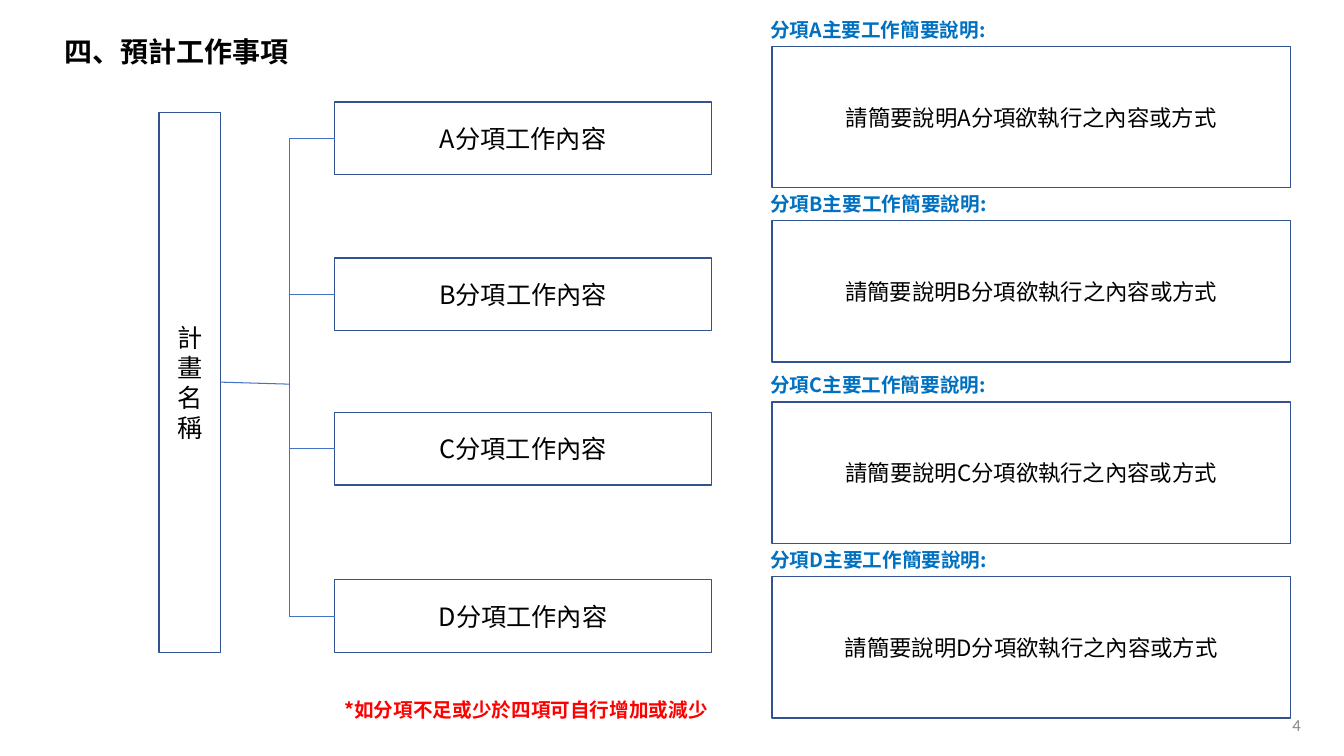
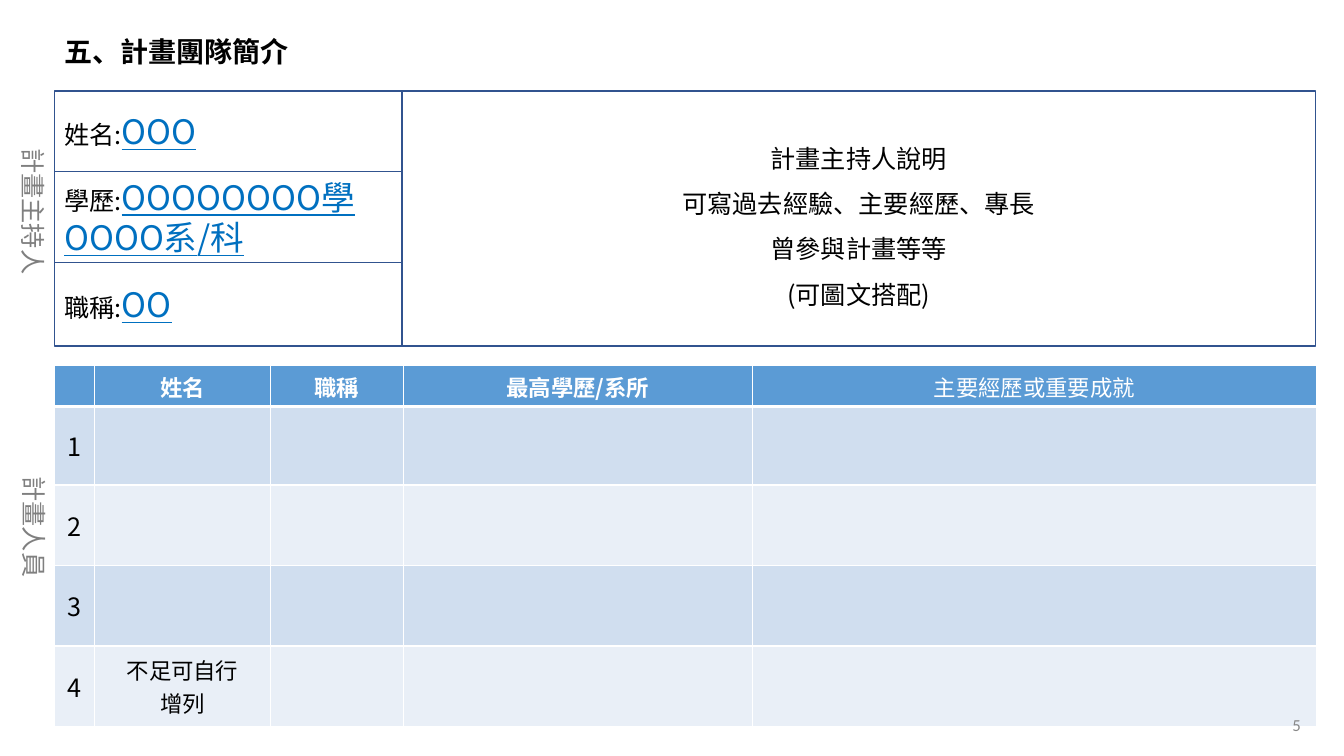
from lxml.etree import SubElement
from pptx import Presentation
from pptx.dml.color import RGBColor
from pptx.enum.shapes import MSO_CONNECTOR, MSO_SHAPE
from pptx.enum.text import MSO_ANCHOR, PP_ALIGN
from pptx.oxml.ns import qn
from pptx.util import Cm, Pt

COLORS = {
    "text": "000000", "accent": "0070C0", "warning": "FF0000", "muted": "7F7F7F",
    "number": "888888", "outline": "31538F", "connector": "4472C4",
    "header": "5B9BD5", "band_dark": "D0DEEF", "band_light": "E9EFF7", "white": "FFFFFF",
}
FONT = "Noto Sans CJK TC"
BLANK = {"size": 24, "color": "accent", "underline": True}
SECTIONS = "ABCD"


def rgb(name):
    """Return the named palette colour."""
    return RGBColor.from_string(COLORS[name])


def format_run(run, size=18, color="text", bold=False, underline=None, font=FONT):
    """Format one run, including its East Asian typeface."""
    run.font.size = Pt(size)
    run.font.bold = bold
    run.font.underline = underline
    run.font.color.rgb = rgb(color)
    run.font.name = font
    SubElement(run.font._element, qn("a:ea"), typeface=font)


def write(frame, *paragraphs, align=PP_ALIGN.LEFT, anchor=MSO_ANCHOR.TOP, spacing=None, **style):
    """Fill a text frame; a paragraph is a string or a list of (text, style) runs."""
    frame.word_wrap = True
    frame.vertical_anchor = anchor
    for index, content in enumerate(paragraphs):
        paragraph = frame.add_paragraph() if index else frame.paragraphs[0]
        paragraph.alignment = align
        if spacing:
            paragraph.line_spacing = spacing
        for text, changes in [(content, {})] if isinstance(content, str) else content:
            run = paragraph.add_run()
            run.text = text
            format_run(run, **{**style, **changes})


def add_label(slide, box, *paragraphs, rotation=0, **style):
    """Add free text in a box given in centimetres."""
    label = slide.shapes.add_textbox(*map(Cm, box))
    label.rotation = rotation
    write(label.text_frame, *paragraphs, **style)


def add_panel(slide, box, *paragraphs, align=PP_ALIGN.CENTER, **style):
    """Add an outlined rectangle with vertically centred text."""
    panel = slide.shapes.add_shape(MSO_SHAPE.RECTANGLE, *map(Cm, box))
    panel.shadow.inherit = False
    panel.fill.background()
    panel.line.color.rgb = rgb("outline")
    panel.line.width = Pt(1)
    write(panel.text_frame, *paragraphs, align=align, anchor=MSO_ANCHOR.MIDDLE, **style)


def add_line(slide, *ends):
    """Add a thin straight connector between two points."""
    line = slide.shapes.add_connector(MSO_CONNECTOR.STRAIGHT, *map(Cm, ends))
    line.line.color.rgb = rgb("connector")
    line.line.width = Pt(0.75)
    SubElement(line._element.spPr, qn("a:effectLst"))


def add_slide(prs, heading):
    """Add a slide with the shared title style."""
    slide = prs.slides.add_slide(prs.slide_layouts[5])
    title = slide.shapes.title
    title.left, title.top, title.width, title.height = map(Cm, (1.37, 0.74, 6.3, 1.12))
    write(title.text_frame, heading, size=20, bold=True)
    return slide


def add_number(slide, number):
    """Add the page number in the lower right corner."""
    add_label(slide, (30.48, 17.75, 4.39, 1.02), str(number), align=PP_ALIGN.CENTER,
              anchor=MSO_ANCHOR.MIDDLE, size=12, color="number", font="Calibri")


def work_tree(slide, box):
    """Draw the plan bar branching into its work sections."""
    left, top, width, height = box
    bar_top, bar_width = top + 0.27, 1.55
    trunk, branch, item_height = left + 3.28, left + 4.42, 1.83
    add_panel(slide, (left, bar_top, bar_width, top + height - bar_top), "計畫名稱")
    item_tops = [top + offset for offset in (0, 3.93, 7.82, 12.04)]
    middles = [item_top + item_height / 2 for item_top in item_tops]
    for section, item_top, middle in zip(SECTIONS, item_tops, middles):
        add_panel(slide, (branch, item_top, left + width - branch, item_height),
                  f"{section}分項工作內容")
        add_line(slide, trunk, middle, branch, middle)
    add_line(slide, trunk, middles[0], trunk, middles[-1])
    add_line(slide, left + bar_width, top + 7.06, trunk, top + 7.11)


def work_descriptions(slide, box):
    """Stack a heading and a description panel for each section."""
    left, top, width, height = box
    label_height, panel_height = 0.85, 3.56
    last = height - label_height - panel_height
    for section, offset in zip(SECTIONS, (0, 4.39, 8.96, last)):
        panel_top = top + offset + label_height
        add_panel(slide, (left, panel_top, width, panel_height),
                  f"請簡要說明{section}分項欲執行之內容或方式", size=16)
        add_label(slide, (left - 0.3, top + offset, 6.58, label_height),
                  f"分項{section}主要工作簡要說明:", size=14, color="accent", bold=True)


def leader_profile(slide, box):
    """Draw the leader's particulars beside the description panel."""
    left, top, width, height = box
    facts_width = 8.76
    facts = (
        (2.03, [[("姓名:", {}), ("OOO", BLANK)]]),
        (2.29, [[("學歷:", {}), ("OOOOOOOO學", BLANK)], [("OOOO系/科", BLANK)]]),
        (2.11, [[("職稱:", {}), ("OO", BLANK)]]),
    )
    fact_top = top
    for fact_height, paragraphs in facts:
        add_panel(slide, (left, fact_top, facts_width, fact_height), *paragraphs,
                  align=PP_ALIGN.LEFT)
        fact_top += fact_height
    add_panel(slide, (left + facts_width, top, width - facts_width, height),
              "計畫主持人說明", "可寫過去經驗、主要經歷、專長", "曾參與計畫等等", "(可圖文搭配)",
              spacing=1.5)
    add_label(slide, (left - 2.64, top + 2.56, 3.99, 1.27), "計畫主持人",
              rotation=90, color="muted")


def format_cell(cell, fill, bottom=1):
    """Give a cell white borders and a solid fill."""
    properties = cell._tc.get_or_add_tcPr()
    for side, points in (("L", 1), ("R", 1), ("T", 1), ("B", bottom)):
        border = SubElement(properties, qn(f"a:ln{side}"), w=str(Pt(points)))
        SubElement(SubElement(border, qn("a:solidFill")), qn("a:srgbClr"), val=COLORS["white"])
    cell.fill.solid()
    cell.fill.fore_color.rgb = rgb(fill)


def member_table(slide, box):
    """Draw the table of team members and its side label."""
    left, top, width, height = box
    headings = ("", "姓名", "職稱", "最高學歷/系所", "主要經歷或重要成就")
    widths = (1.02, 4.42, 3.35, 8.81, width - 17.6)
    heights = (1.02, 1.98, 2.03, 2.03, height - 7.06)
    table = slide.shapes.add_table(len(heights), len(widths), *map(Cm, box)).table
    for column, column_width in zip(table.columns, widths):
        column.width = Cm(column_width)
    for row, row_height in zip(table.rows, heights):
        row.height = Cm(row_height)
    centred = {"align": PP_ALIGN.CENTER, "anchor": MSO_ANCHOR.MIDDLE}
    for index, heading in enumerate(headings):
        cell = table.cell(0, index)
        format_cell(cell, "header", bottom=3)
        if heading:
            write(cell.text_frame, heading, size=16, color="white",
                  bold=heading != headings[-1], **centred)
            cell.vertical_anchor = MSO_ANCHOR.MIDDLE
    for member in range(1, len(heights)):
        for index in range(len(widths)):
            format_cell(table.cell(member, index), "band_dark" if member % 2 else "band_light")
        number = table.cell(member, 0)
        write(number.text_frame, str(member), **centred)
        number.vertical_anchor = MSO_ANCHOR.MIDDLE
    hint = table.cell(len(heights) - 1, 1)
    write(hint.text_frame, "不足可自行", "增列", size=16, **centred)
    hint.vertical_anchor = MSO_ANCHOR.MIDDLE
    add_label(slide, (left - 2.26, top + 3.53, 3.25, 1.27), "計畫人員",
              rotation=90, color="muted")


def work_slide(prs):
    """Build the slide of planned work items."""
    slide = add_slide(prs, "四、預計工作事項")
    work_tree(slide, (4.01, 2.57, 13.92, 13.87))
    work_descriptions(slide, (19.46, 0.32, 13.06, 17.77))
    add_label(slide, (8.43, 17.45, 11.1, 0.86), "*如分項不足或少於四項可自行增加或減少",
              size=14, color="warning", bold=True)
    add_number(slide, 4)


def team_slide(prs):
    """Build the slide that introduces the project team."""
    slide = add_slide(prs, "五、計畫團隊簡介")
    leader_profile(slide, (1.37, 2.29, 31.78, 6.43))
    member_table(slide, (1.37, 9.22, 31.8, 9.09))
    add_number(slide, 5)


def main():
    """Build and save the presentation."""
    prs = Presentation()
    prs.slide_width, prs.slide_height = Cm(33.87), Cm(19.05)
    work_slide(prs)
    team_slide(prs)
    prs.save("out.pptx")


if __name__ == "__main__":
    main()
